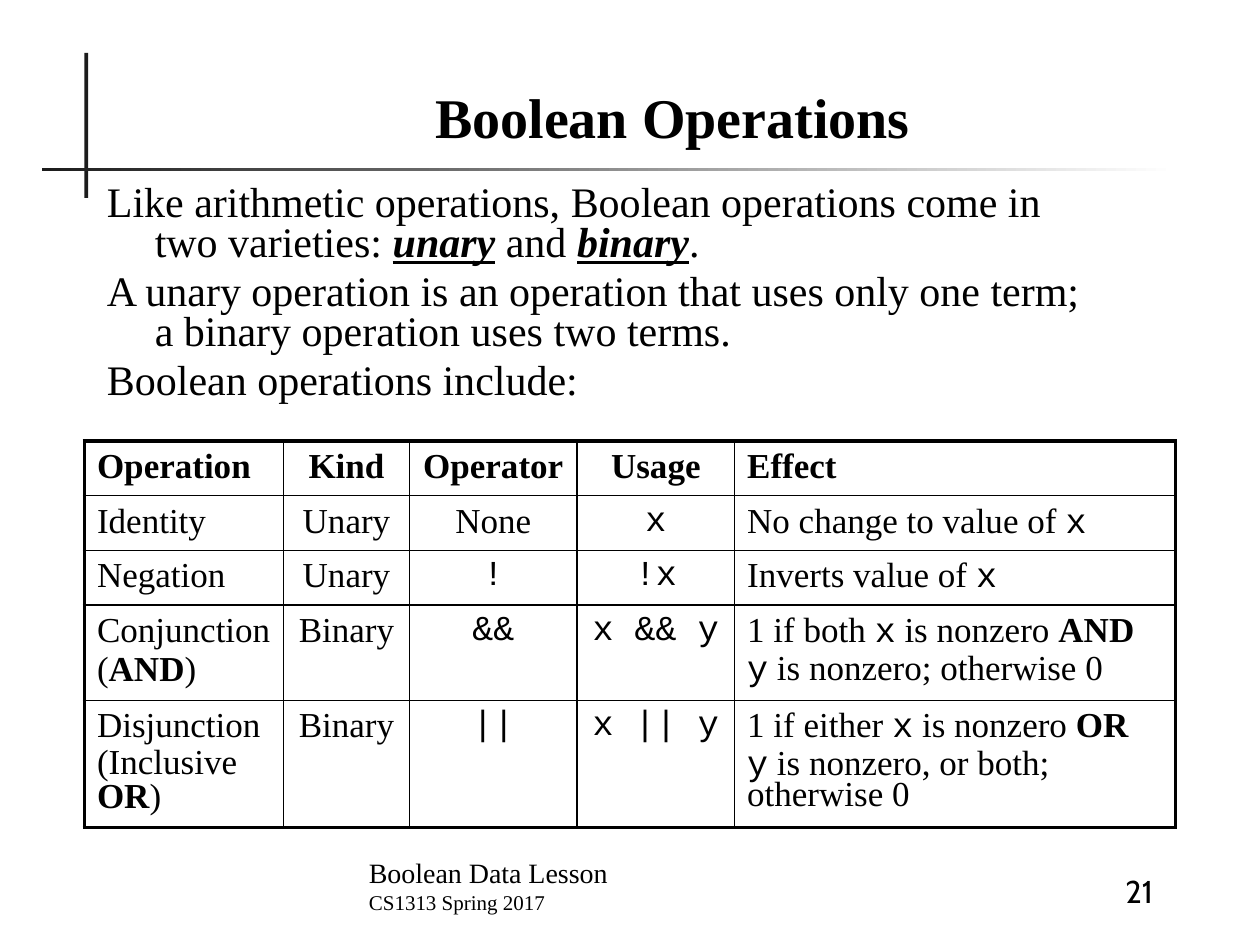
from lxml import etree
from pptx import Presentation
from pptx import util as u
from pptx.dml.color import RGBColor
from pptx.enum import shapes, text
from pptx.oxml import ns

BLACK = RGBColor(0x00, 0x00, 0x00)
CHARCOAL = RGBColor(0x1C, 0x1C, 0x1C)
WHITE = RGBColor(0xFF, 0xFF, 0xFF)
SERIF, MONO, SANS = "Times New Roman", "Courier New", "Cabin"
LEFT, CENTER, RIGHT = text.PP_ALIGN.LEFT, text.PP_ALIGN.CENTER, text.PP_ALIGN.RIGHT
OUTER_LINE, INNER_LINE = u.Pt(2.25), u.Pt(1)

# A paragraph is a list of runs: a plain string, or (string, format).
BOLD = {"bold": True}
CODE = {"font": MONO}
TERM = {"bold": True, "italic": True, "underline": True}
X, Y = ("x", CODE), ("y", CODE)

BODY = [
    ["Like arithmetic operations, Boolean operations come in\ntwo varieties: ",
     ("unary", TERM), " and ", ("binary", TERM), "."],
    ["A unary operation is an operation that uses only one term;\n"
     "a binary operation uses two terms."],
    ["Boolean operations include:"],
]

COLUMN_WIDTHS = [1.58, 1, 1.33, 1.25, 3.5]
COLUMN_ALIGNS = [LEFT, CENTER, CENTER, CENTER, LEFT]
ROW_HEIGHTS = [0.42, 0.43, 0.43, 0.72, 1]
HEADINGS = ["Operation", "Kind", "Operator", "Usage", "Effect"]

# Each cell is a list of paragraphs.
OPERATIONS = [
    [[["Identity"]], [["Unary"]], [["None"]], [[X]],
     [["No change to value of ", X]]],
    [[["Negation"]], [["Unary"]], [[("!", CODE)]], [[("!x", CODE)]],
     [["Inverts value of ", X]]],
    [[["Conjunction"], ["(", ("AND", BOLD), ")"]],
     [["Binary"]], [[("&&", CODE)]], [[("x && y", CODE)]],
     [["1 if both ", X, " is nonzero ", ("AND", BOLD)],
      [Y, " is nonzero; otherwise 0"]]],
    [[["Disjunction"], ["(Inclusive"], [("OR", BOLD), ")"]],
     [["Binary"]], [[("||", CODE)]], [[("x || y", CODE)]],
     [["1 if either ", X, " is nonzero ", ("OR", BOLD)],
      [Y, " is nonzero, or both;"], ["otherwise 0"]]],
]
# Line spacing of the paragraphs after the first, by (row, column).
TIGHT_SPACING = {(3, 0): 0.8, (4, 0): 0.7, (3, 4): 0.6, (4, 4): 0.6}


def add_run(paragraph, wording, size, font=SERIF, bold=False, italic=False,
            underline=False):
    """Add one run; a newline in the wording becomes a line break."""
    for index, line in enumerate(wording.split("\n")):
        if index:
            paragraph.add_line_break()
        run = paragraph.add_run()
        run.text = line
        run.font.size = u.Pt(size)
        run.font.name = font
        run.font.bold = bold
        run.font.italic = italic
        run.font.underline = underline
        run.font.color.rgb = BLACK


def write_paragraph(frame, runs, first=True, size=20, align=LEFT, spacing=None,
                    before=0.2, hanging=None, **run_format):
    """Write runs; before is the gap above as a share of the text size."""
    paragraph = frame.paragraphs[0] if first else frame.add_paragraph()
    paragraph.alignment = align
    if spacing:
        paragraph.line_spacing = spacing
    if not first:
        paragraph.space_before = u.Pt(size * before)
    if hanging:
        properties = paragraph._p.get_or_add_pPr()
        properties.set("marL", str(u.Inches(hanging)))
        properties.set("indent", str(-u.Inches(hanging)))
    for run in runs:
        wording, extra = (run, {}) if isinstance(run, str) else run
        add_run(paragraph, wording, size, **{**run_format, **extra})


def add_text_frame(slide, left, top, width, height, anchor=text.MSO_ANCHOR.BOTTOM):
    box = slide.shapes.add_textbox(*map(u.Inches, (left, top, width, height)))
    frame = box.text_frame
    frame.word_wrap = True
    frame.vertical_anchor = anchor
    return frame


def add_bar(slide, left, top, width, height, fade=False):
    shape = slide.shapes.add_shape(shapes.MSO_SHAPE.RECTANGLE,
                                   *map(u.Inches, (left, top, width, height)))
    shape.shadow.inherit = False
    shape.line.fill.background()
    if fade:
        shape.fill.gradient()
        shape.fill.gradient_angle = 0
        for stop, color in zip(shape.fill.gradient_stops, (CHARCOAL, WHITE)):
            stop.color.rgb = color
    else:
        shape.fill.solid()
        shape.fill.fore_color.rgb = CHARCOAL


def set_borders(cell, widths):
    """Draw the borders; widths maps L, R, T and B, in that order."""
    properties = cell._tc.get_or_add_tcPr()
    for side, width in widths.items():
        line = etree.SubElement(properties, ns.qn(f"a:ln{side}"), w=str(width))
        fill = etree.SubElement(line, ns.qn("a:solidFill"))
        etree.SubElement(fill, ns.qn("a:srgbClr"), val=str(BLACK))


def add_operations_table(slide, left, top):
    rows = [[[[heading]] for heading in HEADINGS]] + OPERATIONS
    last_row, last_column = len(rows) - 1, len(HEADINGS) - 1
    table = slide.shapes.add_table(
        len(rows), len(HEADINGS), u.Inches(left), u.Inches(top),
        u.Inches(sum(COLUMN_WIDTHS)), u.Inches(sum(ROW_HEIGHTS))).table
    table.first_row = table.horz_banding = False
    for column, width in zip(table.columns, COLUMN_WIDTHS):
        column.width = u.Inches(width)
    for r, cells in enumerate(rows):
        table.rows[r].height = u.Inches(ROW_HEIGHTS[r])
        for c, paragraphs in enumerate(cells):
            cell = table.cell(r, c)
            edges = {"L": c == 0, "R": c == last_column,
                     "T": r == 0, "B": r == last_row}
            set_borders(cell, {side: OUTER_LINE if outer else INNER_LINE
                               for side, outer in edges.items()})
            cell.fill.background()
            for index, runs in enumerate(paragraphs):
                spacing = TIGHT_SPACING.get((r, c)) if index else None
                write_paragraph(cell.text_frame, runs, first=index == 0,
                                align=COLUMN_ALIGNS[c], spacing=spacing,
                                bold=r == 0)


def main():
    presentation = Presentation()
    presentation.slide_width = u.Inches(10)
    presentation.slide_height = u.Inches(7.5)
    slide = presentation.slides.add_slide(presentation.slide_layouts[6])

    add_bar(slide, 0.67, 0.42, 0.03, 1.15)
    add_bar(slide, 0.33, 1.33, 9, 0.03, fade=True)

    footer = add_text_frame(slide, 2.83, 6.81, 4.83, 0.5)
    write_paragraph(footer, ["Boolean Data Lesson"], size=16)
    write_paragraph(footer, ["CS1313 Spring 2017"], first=False, size=12, before=0)
    number = add_text_frame(slide, 7.83, 6.77, 1.42, 0.5)
    write_paragraph(number, ["21"], size=18, align=RIGHT, font=SANS)

    title = add_text_frame(slide, 1.08, 0.5, 8.52, 0.74)
    write_paragraph(title, ["Boolean Operations"], size=32, align=CENTER, bold=True)
    body = add_text_frame(slide, 0.75, 1.42, 8.58, 2, text.MSO_ANCHOR.TOP)
    for index, runs in enumerate(BODY):
        write_paragraph(body, runs, first=index == 0, size=24, spacing=0.8,
                        hanging=0.38)

    add_operations_table(slide, 0.67, 3.5)
    presentation.save("out.pptx")


if __name__ == "__main__":
    main()
